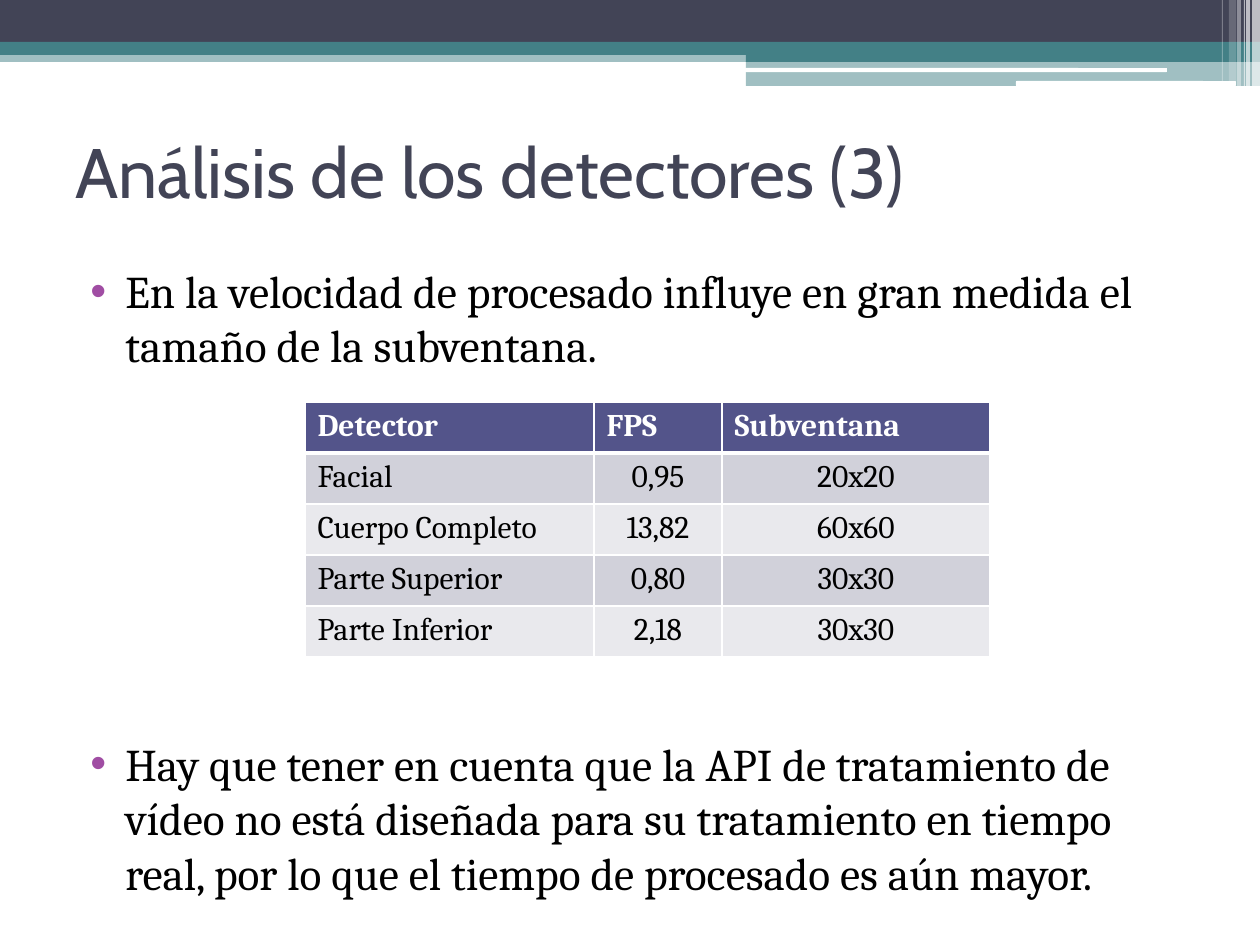
from dataclasses import dataclass

from pptx import Presentation
from pptx.dml.color import RGBColor as RGB
from pptx.enum.shapes import MSO_SHAPE as Shape
from pptx.enum.text import MSO_ANCHOR as Anchor, PP_ALIGN as Align
from pptx.oxml.ns import qn
from pptx.util import Emu, Pt
from lxml.etree import SubElement as Sub

SCALE = 914400 / 126


def px(n):
    return Emu(round(n * SCALE))


@dataclass(frozen=True)
class Theme:
    dark: str = "424456"
    teal: str = "438086"
    white: str = "FFFFFF"
    black: str = "000000"
    bullet: str = "A04DA3"
    header: str = "53548A"
    bands: tuple = ("D1D1DA", "E9E9ED")
    head_font: str = "Cabin"
    body_font: str = "Cambria"
    title: float = 40
    body: float = 25.9
    cell: float = 18


def write(para, text, *, font, size, color, bold=False, align=Align.LEFT):
    para.alignment = align
    run = para.add_run()
    run.text = text
    run.font.name = font
    run.font.size = Pt(size)
    run.font.bold = bold
    run.font.color.rgb = RGB.from_string(color)


def add_bullet(para, color):
    """Hang the paragraph behind a coloured dot."""
    props = para._p.get_or_add_pPr()
    props.set("marL", str(px(50)))
    props.set("indent", str(-px(35)))
    Sub(Sub(props, qn("a:buClr")), qn("a:srgbClr"), val=color)
    Sub(props, qn("a:buFont"), typeface="Arial")
    Sub(props, qn("a:buChar"), char="•")


def add_border(cell, color, side, width):
    line = Sub(cell._tc.get_or_add_tcPr(), qn(f"a:ln{side}"), w=str(Pt(width)))
    Sub(Sub(line, qn("a:solidFill")), qn("a:srgbClr"), val=color)


class Deck:
    def __init__(self, theme):
        self.theme = theme
        self.prs = Presentation()
        self.prs.slide_width, self.prs.slide_height = px(1260), px(945)
        self.slide = self.prs.slides.add_slide(self.prs.slide_layouts[6])

    def bar(self, x, y, w, h, color, alpha=100, kind=Shape.RECTANGLE):
        shape = self.slide.shapes.add_shape(kind, px(x), px(y), px(w), px(h))
        shape.shadow.inherit = False
        shape.line.fill.background()
        shape.fill.solid()
        shape.fill.fore_color.rgb = RGB.from_string(color)
        if alpha < 100:
            tint = shape._element.spPr.find(".//" + qn("a:srgbClr"))
            Sub(tint, qn("a:alpha"), val=str(alpha * 1000))

    def box(self, x, y, w, h, anchor=Anchor.TOP):
        box = self.slide.shapes.add_textbox(px(x), px(y), px(w), px(h))
        frame = box.text_frame
        frame.word_wrap = True
        frame.vertical_anchor = anchor
        return frame

    def title(self, text):
        t = self.theme
        frame = self.box(63, 97, 1134, 147, Anchor.MIDDLE)
        write(frame.paragraphs[0], text,
              font=t.head_font, size=t.title, color=t.dark)

    def points(self, items):
        """Write bulleted (text, points of space before) items."""
        t = self.theme
        frame = self.box(63, 257, 1134, 639)
        for i, (text, gap) in enumerate(items):
            para = frame.add_paragraph() if i else frame.paragraphs[0]
            para.space_before = Pt(gap)
            write(para, text, font=t.body_font, size=t.body, color=t.black)
            add_bullet(para, t.bullet)

    def table(self, x, y, widths, height, rows):
        t = self.theme
        grid = self.slide.shapes.add_table(
            len(rows), len(widths), px(x), px(y),
            px(sum(widths)), px(height * len(rows))).table
        for col, width in zip(grid.columns, widths):
            col.width = px(width)
        for r, row in enumerate(rows):
            grid.rows[r].height = px(height)
            for c, text in enumerate(row):
                cell, head = grid.cell(r, c), r == 0
                for side in "LRTB":
                    thick = (side, r) in (("B", 0), ("T", 1))
                    add_border(cell, t.white, side, 3 if thick else 1)
                cell.fill.solid()
                cell.fill.fore_color.rgb = RGB.from_string(
                    t.header if head else t.bands[(r - 1) % 2])
                write(cell.text_frame.paragraphs[0], text,
                      font=t.body_font, size=t.cell, bold=head,
                      color=t.white if head else t.black,
                      align=Align.CENTER if r and c else Align.LEFT)

    def banner(self):
        t = self.theme
        self.bar(0, 50, 1260, 12, t.teal, 50)
        self.bar(0, 0, 1260, 43, t.dark)
        self.bar(0, 42, 1260, 13, t.teal)
        self.bar(746, 49, 514, 13, t.teal)
        self.bar(746, 61, 514, 25, t.teal, 50)
        self.bar(745, 68, 422, 4, t.white, kind=Shape.ROUNDED_RECTANGLE)
        self.bar(1016, 81, 220, 5, t.white, kind=Shape.ROUNDED_RECTANGLE)
        stripes = [(1252, 8, 86, 65), (1246, 4, 86, 65), (1244, 1, 86, 60),
                   (1237, 4, 86, 40), (1229, 7, 81, 20), (1222, 1, 81, 30)]
        for x, w, h, alpha in stripes:
            self.bar(x, 0, w, h, t.white, alpha)


def main():
    deck = Deck(Theme())
    deck.banner()
    deck.title("Análisis de los detectores (3)")
    deck.points([
        ("En la velocidad de procesado influye en gran medida el tamaño "
         "de la subventana.", 3),
        ("Hay que tener en cuenta que la API de tratamiento de vídeo no está "
         "diseñada para su tratamiento en tiempo real, por lo que el tiempo "
         "de procesado es aún mayor.", 208),
    ])
    deck.table(305, 402, (289, 128, 268), 51, [
        ("Detector", "FPS", "Subventana"),
        ("Facial", "0,95", "20x20"),
        ("Cuerpo Completo", "13,82", "60x60"),
        ("Parte Superior", "0,80", "30x30"),
        ("Parte Inferior", "2,18", "30x30"),
    ])
    deck.prs.save("out.pptx")


if __name__ == "__main__":
    main()
